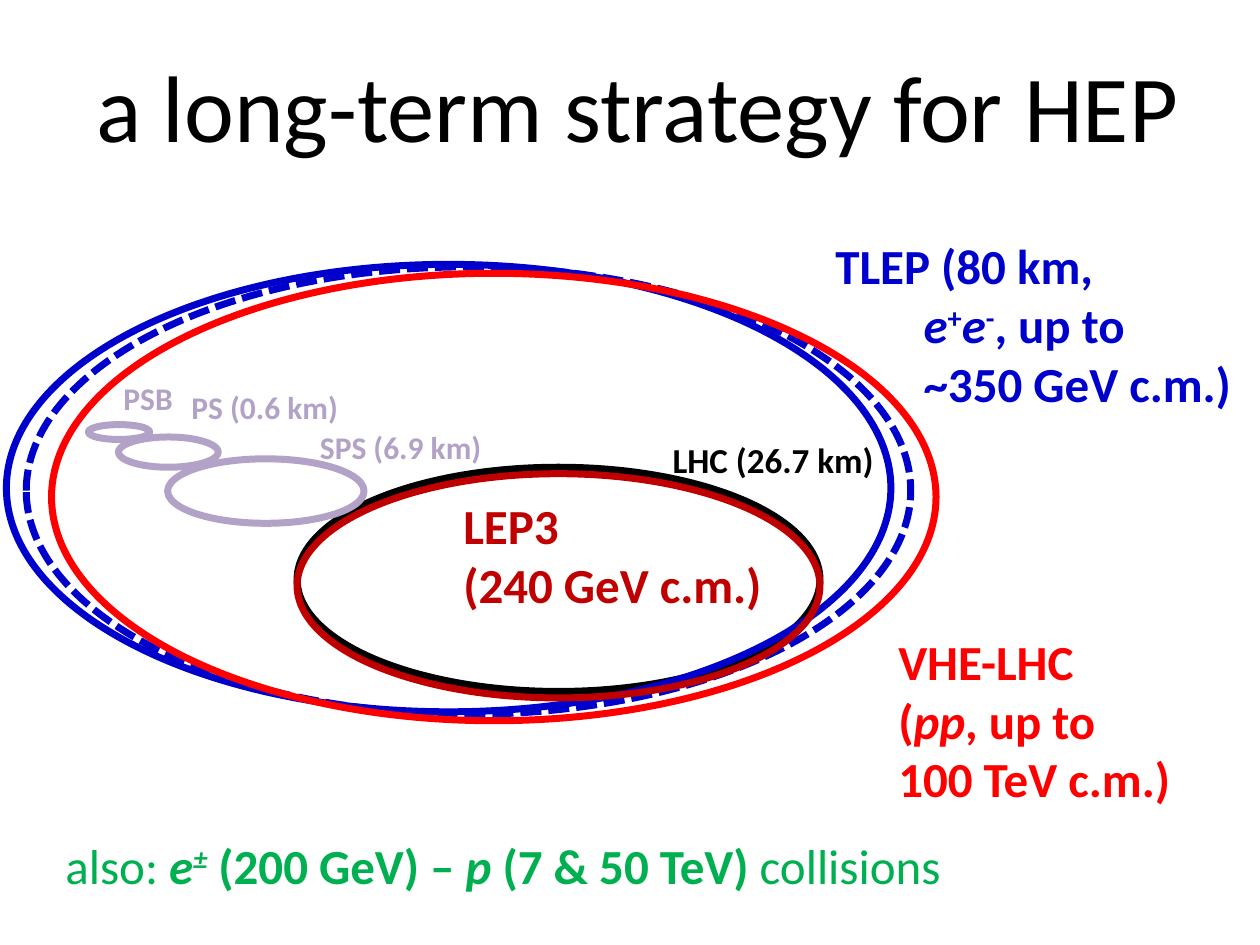
from pptx import Presentation
from pptx.dml.color import RGBColor
from pptx.enum.dml import MSO_LINE
from pptx.enum.shapes import MSO_SHAPE
from pptx.enum.text import MSO_ANCHOR, PP_ALIGN
from pptx.util import Cm, Pt

ELLIPSE = MSO_SHAPE.OVAL
DASH = MSO_LINE.SQUARE_DOT
MIDDLE, TOP = MSO_ANCHOR.MIDDLE, MSO_ANCHOR.TOP
CENTER, LEFT = PP_ALIGN.CENTER, PP_ALIGN.LEFT
FONT = "Calibri"
COLORS = {
    "black": "000000",
    "injector": "B3A2C7",
    "tlep": "0000CC",
    "vhe": "FF0000",
    "lep3": "C00000",
    "also": "00B050",
}
TUNNEL_80KM = (17.83, 9.02)
TUNNEL_27KM = (10.54, 4.52)
INDENT = 1.78


def rgb(name):
    """Return the named colour of the palette."""
    return RGBColor.from_string(COLORS[name])


def add_ring(s, x, y, size, color, dash=None):
    """Draw an accelerator ring as an unfilled ellipse."""
    sp = s.shapes.add_shape(ELLIPSE, Cm(x), Cm(y), Cm(size[0]), Cm(size[1]))
    sp.shadow.inherit = False
    sp.fill.background()
    sp.line.color.rgb = rgb(color)
    sp.line.width = Pt(4)
    if dash:
        sp.line.dash_style = dash


def add_run(p, text, style=""):
    """Add a run; style letters are b bold, i italic and ^ superscript."""
    r = p.add_run()
    r.text = text
    if "b" in style:
        r.font.bold = True
    if "i" in style:
        r.font.italic = True
    if "^" in style:
        r._r.get_or_add_rPr().set("baseline", "30000")


def add_text(s, x, y, w, h, lines, size, color, bold=True, align=LEFT,
             anchor=TOP, indent=0):
    """Add a text box of lines of runs, indenting all lines but the first."""
    tf = s.shapes.add_textbox(Cm(x), Cm(y), Cm(w), Cm(h)).text_frame
    tf.word_wrap = True
    tf.vertical_anchor = anchor
    for i, runs in enumerate(lines):
        p = tf.paragraphs[0] if i == 0 else tf.add_paragraph()
        if i and indent:
            p._p.get_or_add_pPr().set("marL", str(Cm(indent)))
        p.alignment = align
        p.font.name = FONT
        p.font.size = Pt(size)
        p.font.bold = bold
        p.font.color.rgb = rgb(color)
        for run in runs:
            add_run(p, *run)


def add_injectors(s):
    """Draw the LHC with its chain of smaller rings and their labels."""
    add_ring(s, 5.99, 9.42, TUNNEL_27KM, "black")
    for x, y, w, h in [(3.38, 9.25, 3.96, 1.3), (2.39, 8.81, 2.01, 0.61),
                       (1.78, 8.56, 1.24, 0.3)]:
        add_ring(s, x, y, (w, h), "injector")
    for x, y, w, label in [(2.24, 7.52, 1.8, "PSB"),
                           (3.61, 7.7, 3.8, "PS (0.6 km)"),
                           (6.2, 8.51, 4.1, "SPS (6.9 km)")]:
        add_text(s, x, y, w, 1.02, [[(label,)]], 18, "injector")
    add_text(s, 13.31, 8.71, 4.9, 1.12, [[("LHC (26.7 km)",)]], 20, "black")


def main():
    """Build the slide and save it."""
    prs = Presentation()
    prs.slide_width, prs.slide_height = Cm(25.4), Cm(19.05)
    s = prs.slides.add_slide(prs.slide_layouts[6])

    add_text(s, 0.05, 0.53, 25.6, 3.18, [[("a long-term strategy for HEP",)]],
             54, "black", bold=False, align=CENTER, anchor=MIDDLE)
    add_injectors(s)

    add_ring(s, 0.13, 5.33, TUNNEL_80KM, "tlep")
    add_ring(s, 0.53, 5.38, TUNNEL_80KM, "tlep", DASH)
    add_text(s, 16.59, 4.62, 8.8, 3.85, [
        [("TLEP (80 km,",)],
        [("e", "i"), ("+", "^"), ("e", "i"), ("-", "^"), (", up to",)],
        [("~350 GeV c.m.)",)],
    ], 28, "tlep", indent=INDENT)

    add_text(s, 17.86, 12.6, 6.4, 3.84, [
        [("VHE-LHC",)],
        [("(",), ("pp", "i"), (", up to",)],
        [("100 TeV c.m.)",)],
    ], 28, "vhe")
    add_ring(s, 1.04, 5.51, TUNNEL_80KM, "vhe")

    add_text(s, 1.07, 16.71, 19, 1.45, [[
        ("also: ",), ("e", "bi"), ("±", "bi^"), (" (200 GeV) – ", "b"),
        ("p", "bi"), (" (7 & 50 TeV) ", "b"), ("collisions",),
    ]], 28, "also", bold=False)

    add_ring(s, 5.99, 9.55, TUNNEL_27KM, "lep3")
    add_text(s, 9.09, 9.86, 6.9, 4.24, [[("LEP3",)], [("(240 GeV c.m.)",)]],
             28, "lep3")

    prs.save("out.pptx")


if __name__ == "__main__":
    main()
